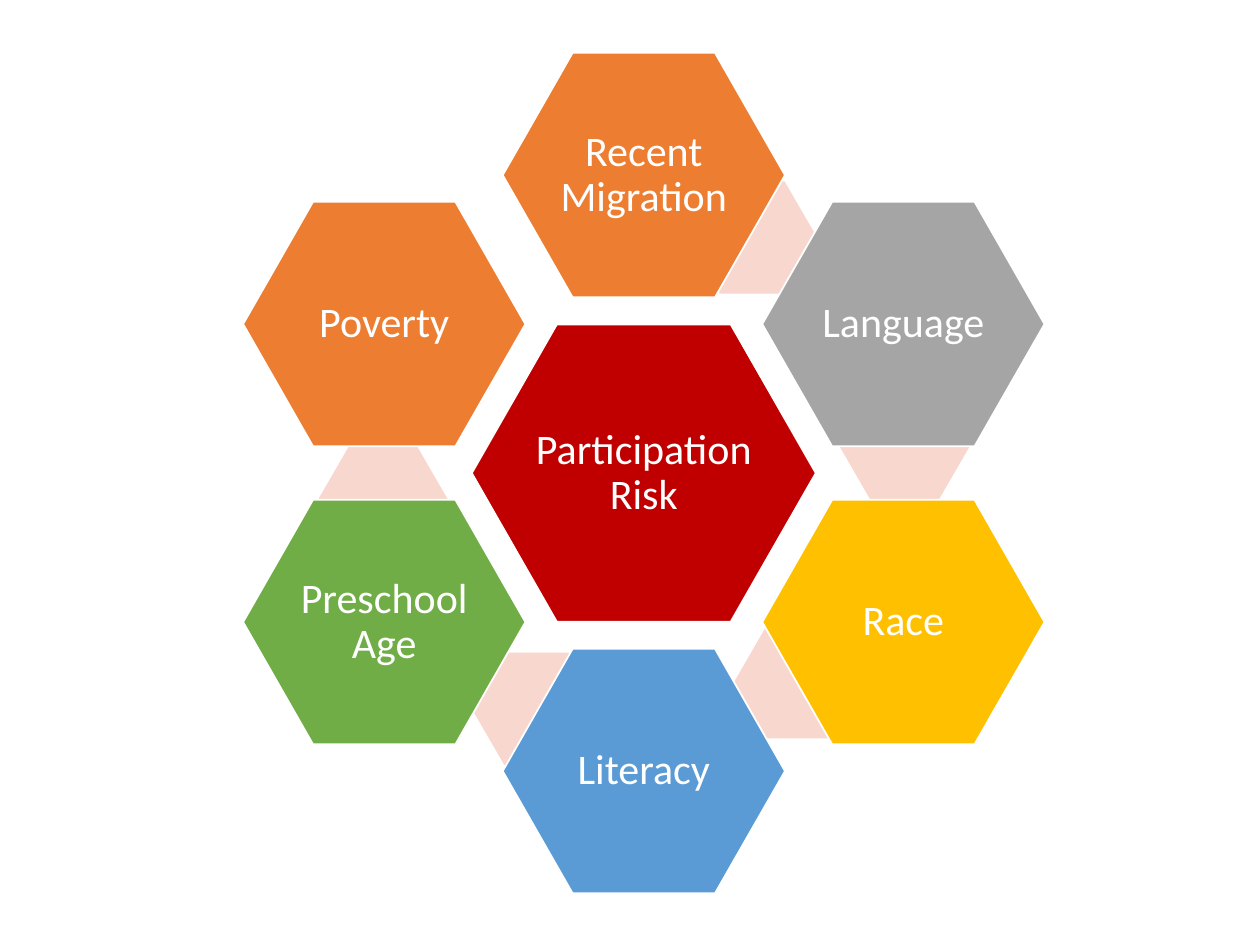
from pptx import Presentation
from pptx.dml.color import RGBColor
from pptx.enum.shapes import MSO_SHAPE
from pptx.enum.text import MSO_ANCHOR, PP_ALIGN
from pptx.util import Inches, Pt

WHITE = RGBColor(0xFF, 0xFF, 0xFF)
RED = RGBColor(0xC0, 0x00, 0x00)
PINK = RGBColor(0xF8, 0xD7, 0xCE)
ORANGE = RGBColor(0xED, 0x7D, 0x31)
GRAY = RGBColor(0xA5, 0xA5, 0xA5)
GOLD = RGBColor(0xFF, 0xC0, 0x00)
BLUE = RGBColor(0x5B, 0x9B, 0xD5)
GREEN = RGBColor(0x70, 0xAD, 0x47)

CORE_SIZE = (Inches(2.73), Inches(2.36))
PETAL_SIZE = (Inches(2.24), Inches(1.94))
LINK_SIZE = (Inches(1.03), Inches(0.89))

# Label, colour, grid step from the centre (columns, half rows),
# and the offset in inches of the link drawn behind the petal
PETALS = [
    ("Recent Migration", ORANGE, (0, -2), (0.86, -1.87)),
    ("Language", GRAY, (1, -1), (2.07, -0.21)),
    ("Race", GOLD, (1, 1), (1.23, 1.66)),
    ("Literacy", BLUE, (0, 2), (-0.85, 1.87)),
    ("Preschool\nAge", GREEN, (-1, 1), (-2.07, 0.21)),
    ("Poverty", ORANGE, (-1, -1), None),
]


def add_hexagon(slide, center_x, center_y, size, color, adjustment):
    width, height = size
    shape = slide.shapes.add_shape(
        MSO_SHAPE.HEXAGON, center_x - width // 2, center_y - height // 2, width, height
    )
    shape.adjustments[0] = adjustment
    shape.shadow.inherit = False
    shape.fill.solid()
    shape.fill.fore_color.rgb = color
    shape.line.fill.background()
    return shape


def add_labelled_hexagon(slide, center_x, center_y, size, color, label):
    shape = add_hexagon(slide, center_x, center_y, size, color, 0.286)
    shape.line.color.rgb = WHITE
    shape.line.width = Pt(1)
    frame = shape.text_frame
    frame.word_wrap = True
    frame.vertical_anchor = MSO_ANCHOR.MIDDLE
    frame.margin_left = frame.margin_right = Inches(0.03)
    frame.margin_top = frame.margin_bottom = Inches(0.03)
    paragraph = frame.paragraphs[0]
    paragraph.alignment = PP_ALIGN.CENTER
    paragraph.line_spacing = 0.9
    for index, line in enumerate(label.split("\n")):
        if index:
            paragraph.add_line_break()
        run = paragraph.add_run()
        run.text = line
        run.font.name = "Calibri"
        run.font.size = Pt(24)
        run.font.color.rgb = WHITE


def add_risk_wheel(slide, left, top, width, height):
    center_x, center_y = left + width // 2, top + height // 2
    column_step = (width - PETAL_SIZE[0]) // 2
    half_row_step = (height - PETAL_SIZE[1]) // 4

    # Core
    add_labelled_hexagon(slide, center_x, center_y, CORE_SIZE, RED, "Participation\nRisk")

    # Petals, each above the link to the next one
    for label, color, (column, half_row), link in PETALS:
        if link:
            add_hexagon(slide, center_x + Inches(link[0]), center_y + Inches(link[1]),
                        LINK_SIZE, PINK, 0.289)
        add_labelled_hexagon(slide, center_x + column * column_step,
                             center_y + half_row * half_row_step, PETAL_SIZE, color, label)


def main():
    presentation = Presentation()
    presentation.slide_width = Inches(10)
    presentation.slide_height = Inches(7.5)
    slide = presentation.slides.add_slide(presentation.slide_layouts[6])
    add_risk_wheel(slide, Inches(1.93), Inches(0.42), Inches(6.36), Inches(6.67))
    presentation.save("out.pptx")


if __name__ == "__main__":
    main()
